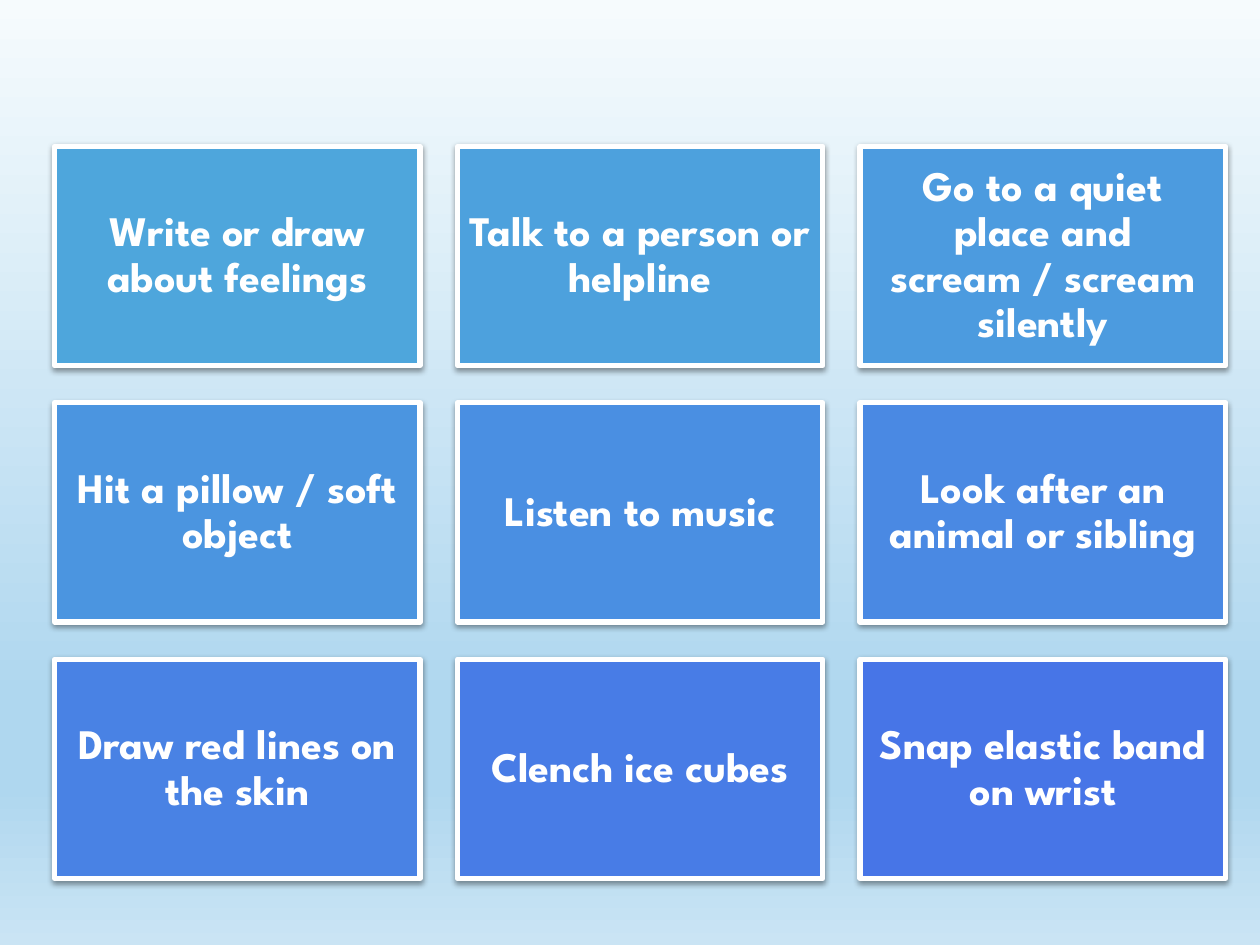
from lxml import etree
from pptx import Presentation, util as u
from pptx.dml.color import RGBColor
from pptx.enum import shapes, text
from pptx.oxml.ns import qn

# (label, fill), read row by row
CARDS = [
    ("Write or draw about feelings", "4EA6DC"),
    ("Talk to a person or helpline", "4DA1DD"),
    ("Go to a quiet place and scream / scream silently", "4C9BDF"),
    ("Hit a pillow / soft object", "4B95E0"),
    ("Listen to music", "4A8FE2"),
    ("Look after an animal or sibling", "4A89E3"),
    ("Draw red lines on the skin", "4982E4"),
    ("Clench ice cubes", "487CE6"),
    ("Snap elastic band on wrist", "4775E7"),
]
THEME = {
    "font": "League Spartan",
    "size": 24,
    "white": "FFFFFF",
    "shadow": "000000",
    "background": [(0, "F6FBFD"), (74, "AFD7EF"), (83, "AFD7EF"), (100, "CAE4F4")],
}
COLUMNS = 3
LEFT, TOP = 1.1, 2.95
WIDTH, HEIGHT = 7.37, 4.42
GAP_X, GAP_Y = 0.75, 0.75


def add_xml(parent, tag, **attrs):
    child = etree.SubElement(parent, qn(tag))
    for name, value in attrs.items():
        child.set(name, str(value))
    return child


def paint_background(s, stops):
    fill = s.background.fill
    fill.gradient()
    fill.gradient_angle = 270  # counter-clockwise: runs top to bottom
    stop_list = next(s.background._cSld.iter(qn("a:gsLst")))
    for old in list(stop_list):
        stop_list.remove(old)
    for percent, color in stops:
        stop = add_xml(stop_list, "a:gs", pos=percent * 1000)
        add_xml(stop, "a:srgbClr", val=color)


def add_shadow(sp):
    sp.shadow.inherit = False
    effects = sp._element.spPr.find(qn("a:effectLst"))
    shadow = add_xml(effects, "a:outerShdw", blurRad=u.Pt(3.1), dist=u.Pt(1.6),
                     dir=90 * 60000, algn="ctr", rotWithShape=0)
    color = add_xml(shadow, "a:srgbClr", val=THEME["shadow"])
    add_xml(color, "a:alpha", val=38000)


def write(tf, content, *, size, color, bold=False, margin=0.25, spacing=0.9):
    tf.word_wrap = True
    tf.vertical_anchor = text.MSO_ANCHOR.MIDDLE
    tf.margin_left = tf.margin_right = u.Cm(margin)
    tf.margin_top = tf.margin_bottom = u.Cm(margin)
    p = tf.paragraphs[0]
    p.alignment = text.PP_ALIGN.CENTER
    p.line_spacing = spacing
    r = p.add_run()
    r.text = content
    r.font.name = THEME["font"]
    r.font.size = u.Pt(size)
    r.font.bold = bold
    r.font.color.rgb = RGBColor.from_string(color)


def add_card(s, index, label, color):
    row, column = divmod(index, COLUMNS)
    sp = s.shapes.add_shape(
        shapes.MSO_SHAPE.RECTANGLE,
        u.Cm(LEFT + column * (WIDTH + GAP_X)), u.Cm(TOP + row * (HEIGHT + GAP_Y)),
        u.Cm(WIDTH), u.Cm(HEIGHT))
    sp.fill.solid()
    sp.fill.fore_color.rgb = RGBColor.from_string(color)
    sp.line.color.rgb = RGBColor.from_string(THEME["white"])
    sp.line.width = u.Pt(3)
    add_shadow(sp)
    write(sp.text_frame, label, size=THEME["size"], color=THEME["white"], bold=True)


def main():
    prs = Presentation()
    prs.slide_width, prs.slide_height = u.Cm(25.4), u.Cm(19.05)
    s = prs.slides.add_slide(prs.slide_layouts[6])
    paint_background(s, THEME["background"])
    for index, (label, color) in enumerate(CARDS):
        add_card(s, index, label, color)
    prs.save("out.pptx")


if __name__ == "__main__":
    main()
